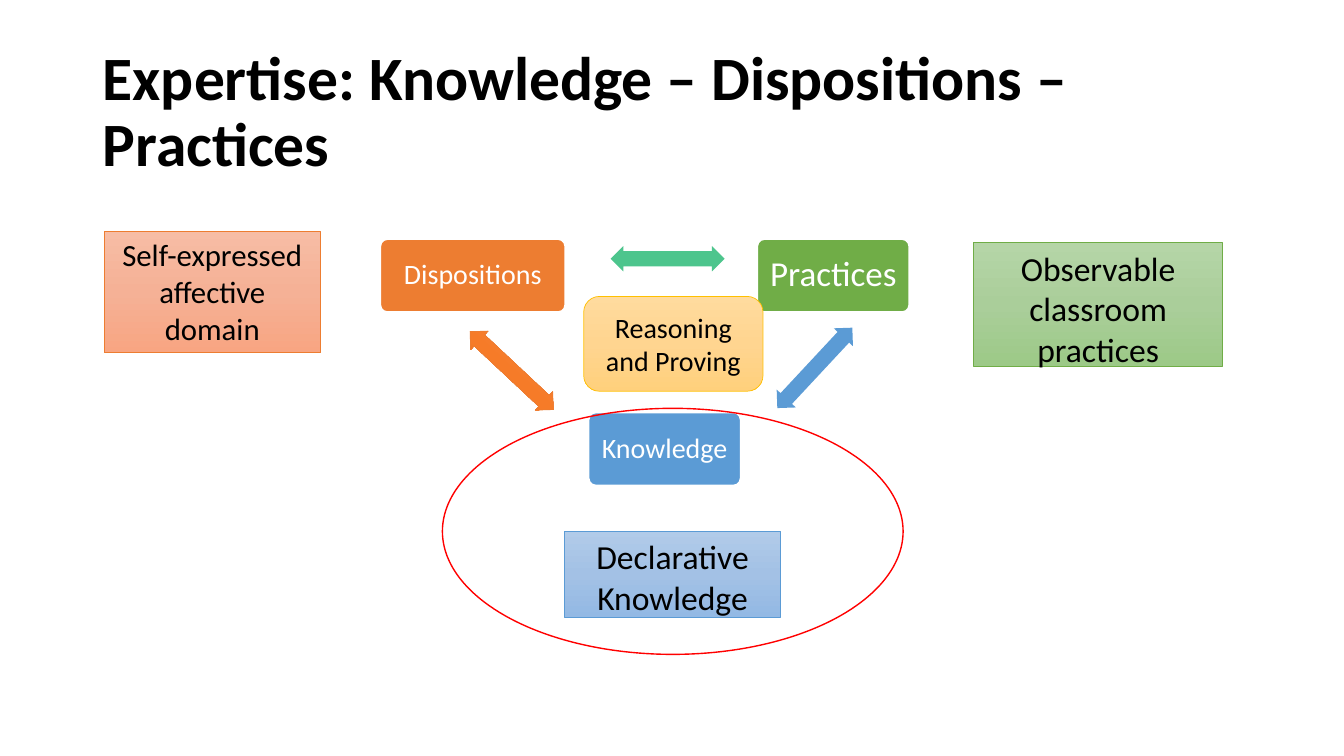
from copy import deepcopy

from pptx import Presentation
from pptx.dml import color
from pptx.enum import shapes, text
from pptx.util import Cm, Pt

SHAPE = shapes.MSO_SHAPE


def rgb(value):
    """Return the colour for a hex string."""
    return color.RGBColor.from_string(value)


def paint(sp, fill, line=None, width=0.5):
    """Fill with nothing, one colour or a list of gradient stops, and outline."""
    sp.shadow.inherit = False
    if fill is None:
        sp.fill.background()
    elif isinstance(fill, str):
        sp.fill.solid()
        sp.fill.fore_color.rgb = rgb(fill)
    else:
        sp.fill.gradient()
        sp.fill.gradient_angle = 270
        gs = sp.element.spPr.xpath("a:gradFill/a:gsLst/a:gs")[0]
        gs.addnext(deepcopy(gs))
        for i, (stop, value) in enumerate(zip(sp.fill.gradient_stops, fill)):
            stop.position = i / 2
            stop.color.rgb = rgb(value)
    if line:
        sp.line.color.rgb = rgb(line)
        sp.line.width = Pt(width)
    else:
        sp.line.fill.background()


def write(sp, lines, size, ink, anchor, align=text.PP_ALIGN.CENTER,
          bold=False, spacing=1.0):
    """Write one paragraph for each line."""
    tf = sp.text_frame
    tf.word_wrap = True
    tf.vertical_anchor = anchor
    tf.text = "\n".join(lines)
    for p in tf.paragraphs:
        p.alignment = align
        p.line_spacing = spacing
        p.font.name = "Calibri"
        p.font.size = Pt(size)
        p.font.bold = bold
        p.font.color.rgb = rgb(ink)


def add_shape(s, kind, box, fill, line=None, width=0.5):
    """Add a painted preset shape at a box in centimetres."""
    sp = s.shapes.add_shape(kind, *map(Cm, box))
    paint(sp, fill, line, width)
    return sp


def add_title(s, title):
    """Add the slide title."""
    sp = s.shapes.add_textbox(Cm(2.34), Cm(1.02), Cm(29.21), Cm(3.68))
    write(sp, [title], 44, "000000", text.MSO_ANCHOR.MIDDLE,
          text.PP_ALIGN.LEFT, bold=True, spacing=0.9)


def add_node(s, label, left, top, width, fill, size=20):
    """Add a rounded corner node of the triangle."""
    sp = add_shape(s, SHAPE.ROUNDED_RECTANGLE, (left, top, width, 1.85),
                   fill, "FFFFFF", 1.5)
    sp.adjustments[0] = 0.1
    tf = sp.text_frame
    tf.margin_left = tf.margin_right = Cm(0.2)
    write(sp, [label], size, "FFFFFF", text.MSO_ANCHOR.MIDDLE, spacing=0.9)


def add_arrow(s, box, angle, fill, line=None):
    """Add a rotated double arrow between two nodes."""
    sp = add_shape(s, SHAPE.LEFT_RIGHT_ARROW, box, fill, line)
    sp.adjustments[0] = 0.6
    sp.adjustments[1] = 0.5
    sp.rotation = angle


def add_note(s, lines, box, fill, line, size=24):
    """Add a gradient box that explains a node."""
    sp = add_shape(s, SHAPE.RECTANGLE, box, fill, line)
    write(sp, lines, size, "000000", text.MSO_ANCHOR.TOP)


def main():
    """Build the expertise slide."""
    prs = Presentation()
    prs.slide_width, prs.slide_height = Cm(33.87), Cm(19.05)
    s = prs.slides.add_slide(prs.slide_layouts[6])
    add_title(s, "Expertise: Knowledge – Dispositions – Practices")

    add_node(s, "Knowledge", 14.83, 10.39, 3.84, "5B9BD5")
    add_node(s, "Practices", 19.08, 6.02, 3.84, "70AD47", 25)
    add_node(s, "Dispositions", 9.58, 6.02, 4.67, "ED7D31")
    add_arrow(s, (19.15, 8.94, 2.77, 0.66), 313, "5B9BD5")
    add_arrow(s, (15.39, 6.2, 2.87, 0.64), 180, "4DC58D")
    add_arrow(s, (11.46, 9.02, 2.87, 0.64), 43.1,
              ["F18C57", "F67B28", "E56C19"], "ED7D31")

    centre = add_shape(s, SHAPE.ROUNDED_RECTANGLE, (14.71, 7.47, 4.52, 2.39),
                       ["FFDB9E", "FFD590", "FFD07C"], "FFC000")
    write(centre, ["Reasoning and Proving"], 20, "000000",
          text.MSO_ANCHOR.MIDDLE)

    add_note(s, ["Observable classroom practices"], (24.54, 6.12, 6.27, 3.12),
             ["B5D5A7", "AACE9A", "9CC987"], "70AD47")
    add_note(s, ["Declarative Knowledge"], (14.22, 13.39, 5.46, 2.16),
             ["B1CBE9", "A3C1E5", "93B9E4"], "5B9BD5")
    add_note(s, ["Self-expressed", "affective domain"],
             (2.62, 5.82, 5.46, 3.07),
             ["F7BDA5", "F5B196", "F8A582"], "ED7D31", 22)
    add_shape(s, SHAPE.OVAL, (11.15, 10.29, 11.61, 6.2), None, "FF0000", 1)
    prs.save("out.pptx")


if __name__ == "__main__":
    main()
